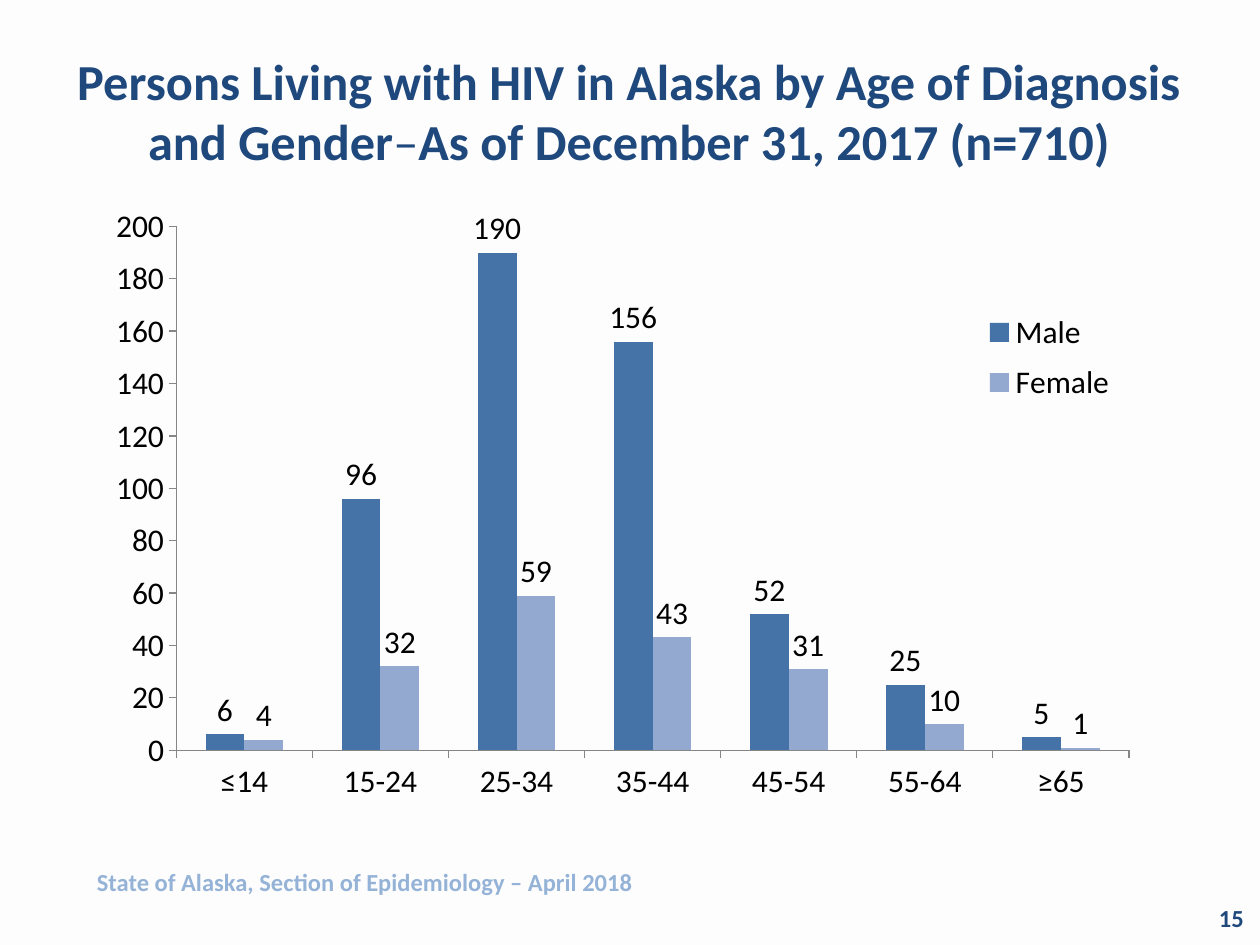
"""Build the slide on persons living with HIV in Alaska by age of diagnosis and gender."""
from dataclasses import dataclass

from lxml import etree
from pptx import Presentation
from pptx import util as u
from pptx.chart.data import CategoryChartData
from pptx.dml.color import RGBColor
from pptx.enum import chart as ch
from pptx.enum import text as t
from pptx.oxml import ns

FONT = "Calibri"
NAVY = RGBColor(0x1F, 0x49, 0x7D)
SOURCE_BLUE = RGBColor(0x95, 0xB3, 0xD7)
MALE_BLUE = RGBColor(0x45, 0x72, 0xA7)
FEMALE_BLUE = RGBColor(0x93, 0xA9, 0xCF)
AXIS_GRAY = RGBColor(0x86, 0x86, 0x86)
BLACK = RGBColor(0, 0, 0)
PALE = RGBColor(0xFD, 0xFD, 0xFE)
AGES = ("≤14", "15-24", "25-34", "35-44", "45-54", "55-64", "≥65")


@dataclass(frozen=True)
class Box:
    left: float
    top: float
    width: float
    height: float

    def lengths(self) -> tuple:
        return tuple(map(u.Inches, (self.left, self.top, self.width, self.height)))


@dataclass(frozen=True)
class Gender:
    name: str
    counts: tuple
    color: RGBColor


GENDERS = (
    Gender("Male", (6, 96, 190, 156, 52, 25, 5), MALE_BLUE),
    Gender("Female", (4, 32, 59, 43, 31, 10, 1), FEMALE_BLUE),
)


def add_text(slide, box: Box, *runs: tuple, size: float, color: RGBColor,
             align=t.PP_ALIGN.LEFT, anchor=t.MSO_ANCHOR.TOP) -> None:
    frame = slide.shapes.add_textbox(*box.lengths()).text_frame
    frame.word_wrap = True
    frame.vertical_anchor = anchor
    paragraph = frame.paragraphs[0]
    paragraph.alignment = align
    for words, bold in runs:
        run = paragraph.add_run()
        run.text = words
        run.font.name, run.font.size, run.font.bold = FONT, u.Pt(size), bold
        run.font.color.rgb = color


def make_layout(box: Box, inner: bool = False):
    layout = etree.Element(ns.qn("c:layout"))
    manual = etree.SubElement(layout, ns.qn("c:manualLayout"))
    settings = [("layoutTarget", "inner")] if inner else []
    settings += [("xMode", "edge"), ("yMode", "edge"), ("x", box.left),
                 ("y", box.top), ("w", box.width), ("h", box.height)]
    for tag, value in settings:
        etree.SubElement(manual, ns.qn(f"c:{tag}")).set("val", str(value))
    return layout


def style_axis(axis) -> None:
    axis.has_major_gridlines = False
    axis.major_tick_mark = ch.XL_TICK_MARK.OUTSIDE
    axis.minor_tick_mark = ch.XL_TICK_MARK.NONE
    axis.format.line.color.rgb = AXIS_GRAY
    axis.format.line.width = u.Pt(0.75)


def add_age_chart(slide, box: Box, genders: tuple) -> None:
    data = CategoryChartData()
    data.categories = AGES
    for gender in genders:
        data.add_series(gender.name, gender.counts)
    chart = slide.shapes.add_chart(
        ch.XL_CHART_TYPE.COLUMN_CLUSTERED, *box.lengths(), data).chart
    chart.has_title = False
    chart.font.name, chart.font.size = FONT, u.Pt(18)
    chart.font.color.rgb = BLACK
    chart.has_legend = True
    chart.legend.position = ch.XL_LEGEND_POSITION.RIGHT
    chart.legend.include_in_layout = False

    for axis in (chart.category_axis, chart.value_axis):
        style_axis(axis)
    chart.value_axis.minimum_scale = 0
    chart.value_axis.maximum_scale = 200
    chart.value_axis.major_unit = 20

    plot = chart.plots[0]
    plot.gap_width, plot.overlap = 150, 0
    plot.vary_by_categories = False
    for series, gender in zip(plot.series, genders):
        series.format.fill.solid()
        series.format.fill.fore_color.rgb = gender.color
        series.data_labels.show_value = True
        series.data_labels.position = ch.XL_LABEL_POSITION.OUTSIDE_END

    plot_area = chart.element.xpath("c:chart/c:plotArea")[0]
    for old_layout in chart.element.xpath("c:chart/*/c:layout"):
        old_layout.getparent().remove(old_layout)
    plot_area.insert(0, make_layout(Box(0.1, 0.06, 0.84, 0.84), inner=True))
    legend_position = chart.element.xpath("c:chart/c:legend/c:legendPos")[0]
    legend_position.addnext(make_layout(Box(0.8, 0.18, 0.14, 0.18)))


def main() -> None:
    deck = Presentation()
    deck.slide_width, deck.slide_height = u.Inches(10), u.Inches(7.5)
    slide = deck.slides.add_slide(deck.slide_layouts[6])
    slide.background.fill.solid()
    slide.background.fill.fore_color.rgb = PALE
    add_text(slide, Box(0.33, 0.25, 9.33, 1.25),
             ("Persons Living with HIV in Alaska by Age of Diagnosis and Gender", True),
             ("–", False), ("As of December 31, 2017 (n=710)", True),
             size=28.8, color=NAVY, align=t.PP_ALIGN.CENTER, anchor=t.MSO_ANCHOR.MIDDLE)
    add_text(slide, Box(7.64, 7.08, 2.33, 0.4), ("15", True), size=14, color=NAVY,
             align=t.PP_ALIGN.RIGHT, anchor=t.MSO_ANCHOR.MIDDLE)
    add_text(slide, Box(0.67, 6.83, 7, 0.34),
             ("State of Alaska, Section of Epidemiology – April 2018", True),
             size=14, color=SOURCE_BLUE)
    add_age_chart(slide, Box(0.5, 1.5, 9, 4.95), GENDERS)
    deck.save("out.pptx")


if __name__ == "__main__":
    main()
